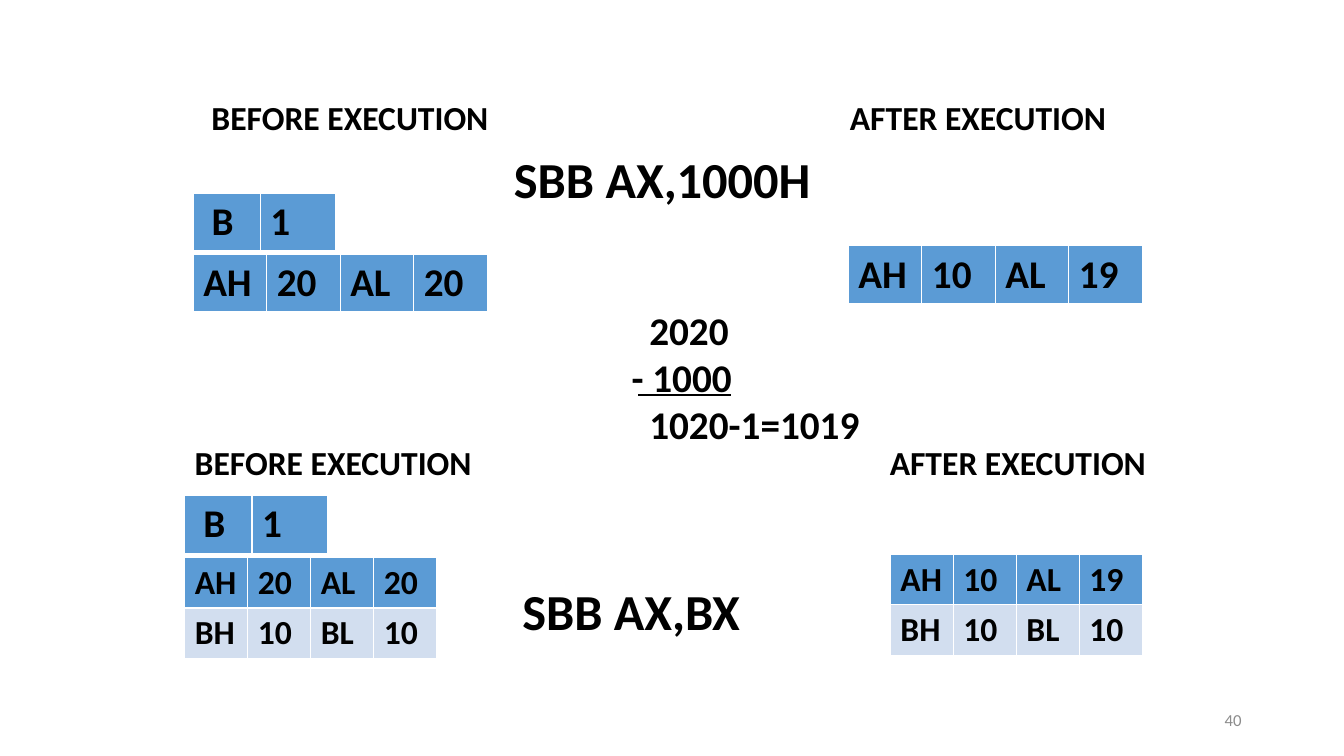
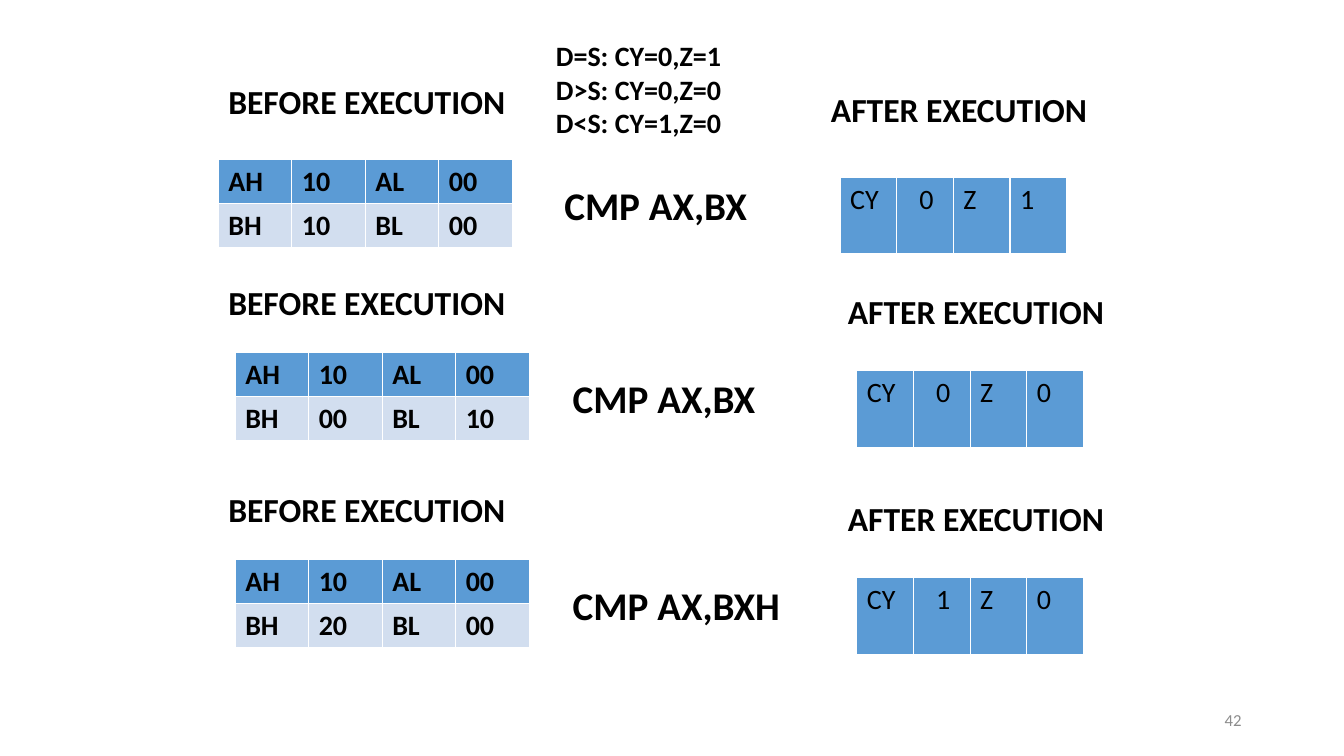
"""Build two slides on the SBB and CMP instructions."""
from dataclasses import dataclass
from typing import NamedTuple

from pptx import Presentation
from pptx.dml.color import RGBColor
from pptx.enum.shapes import MSO_CONNECTOR as Link
from pptx.enum.text import PP_ALIGN as Align
from pptx.oxml.ns import qn
from pptx.slide import Slide
from pptx.text.text import TextFrame
from pptx.util import Pt
from lxml.etree import SubElement

PX = 9525
FONT = "Calibri"
BLACK = RGBColor(0x00, 0x00, 0x00)
GRAY = RGBColor(0x8C, 0x8C, 0x8C)
BLUE = RGBColor(0x5B, 0x9B, 0xD5)
PALE = RGBColor(0xD2, 0xDE, 0xEF)
ROWS = {20: 42, 24: 48, 28: 55}


class Line(NamedTuple):
    text: str
    dent: int = 0


@dataclass
class Label:
    x: int
    y: int
    lines: list[Line]
    size: int = 24
    width: int = 300
    bold: bool = True
    color: RGBColor = BLACK
    align: Align = Align.LEFT


@dataclass
class Grid:
    x: int
    y: int
    cols: list[int]
    rows: list[list[Line]]
    size: int
    bold: bool = True
    high: int = 0


class Case(NamedTuple):
    head: int
    top: int
    shift: int
    code: str
    regs: str
    flags: str


CASES = [
    Case(72, 152, 0, "CMP AX,BX", "AH 10 AL 00/BH 10 BL 00", "0 1"),
    Case(264, 336, 16, "CMP AX,BX", "AH 10 AL 00/BH 00 BL 10", "0 0"),
    Case(461, 533, 16, "CMP AX,BXH", "AH 10 AL 00/BH 20 BL 00", "1 0"),
]


def write(frame: TextFrame, lines: list[Line], size: int, bold: bool,
          color: RGBColor = BLACK, align: Align = Align.LEFT) -> None:
    for i, line in enumerate(lines):
        para = frame.add_paragraph() if i else frame.paragraphs[0]
        para.alignment = align
        if line.dent:
            para._p.get_or_add_pPr().set("marL", str(line.dent * PX))
        run = para.add_run()
        run.text = line.text
        font = run.font
        font.name, font.size, font.bold = FONT, Pt(size), bold
        font.color.rgb = color


def put(slide: Slide, item: Label) -> None:
    high = 10 + len(item.lines) * item.size * 5 // 3
    box = slide.shapes.add_textbox(
        item.x * PX, item.y * PX, item.width * PX, high * PX)
    box.text_frame.word_wrap = True
    write(box.text_frame, item.lines, item.size, item.bold, item.color, item.align)


def draw(slide: Slide, grid: Grid) -> None:
    high = grid.high or ROWS[grid.size]
    count = len(grid.rows)
    table = slide.shapes.add_table(
        count, len(grid.cols), grid.x * PX, grid.y * PX,
        sum(grid.cols) * PX, count * high * PX).table
    for col, width in zip(table.columns, grid.cols):
        col.width = width * PX
    for i, row in enumerate(grid.rows):
        table.rows[i].height = high * PX
        for j, line in enumerate(row):
            cell = table.cell(i, j)
            cell.fill.solid()
            cell.fill.fore_color.rgb = PALE if i else BLUE
            write(cell.text_frame, [line], grid.size, grid.bold)


def regs(slide: Slide, x: int, y: int, width: int, size: int, text: str) -> None:
    rows = [[Line(word) for word in row.split()] for row in text.split("/")]
    draw(slide, Grid(x, y, [width] * 4, rows, size))


def heads(slide: Slide, left: int, right: int, y: int, drop: int = 0) -> None:
    put(slide, Label(left, y, [Line("BEFORE EXECUTION")]))
    put(slide, Label(right, y + drop, [Line("AFTER EXECUTION")]))


def foot(slide: Slide, num: str) -> None:
    put(slide, Label(904, 671, [Line(num)], 12, 288, False, GRAY, Align.RIGHT))


def rule(slide: Slide, x: int, y: int, end: int) -> None:
    line = slide.shapes.add_connector(
        Link.STRAIGHT, x * PX, y * PX, end * PX, y * PX)
    line.line.color.rgb = BLACK
    line.line.width = Pt(1.5)
    SubElement(line._element.spPr, qn("a:effectLst"))


def borrow(slide: Slide) -> None:
    heads(slide, 192, 800, 88)
    heads(slide, 176, 838, 416)
    for x, y in ((184, 184), (176, 472)):
        draw(slide, Grid(x, y, [64, 72], [[Line("B", 8), Line("1")]], 28))
    regs(slide, 184, 242, 70, 28, "AH 20 AL 20")
    regs(slide, 808, 234, 70, 28, "AH 10 AL 19")
    regs(slide, 176, 531, 60, 24, "AH 20 AL 20/BH 10 BL 10")
    regs(slide, 848, 528, 60, 24, "AH 10 AL 19/BH 10 BL 10")
    put(slide, Label(480, 136, [Line("SBB AX,1000H")], 36, 320))
    put(slide, Label(488, 548, [Line("SBB AX,BX")], 36, 280))
    sums = [Line("2020", 25), Line("- 1000", 8), Line("1020-1=1019", 25)]
    put(slide, Label(584, 287, sums, 28, 264))
    rule(slide, 608, 376, 696)
    foot(slide, "40")


def compare(slide: Slide) -> None:
    rules = ["D=S: CY=0,Z=1", "D>S: CY=0,Z=0", "D<S: CY=1,Z=0"]
    put(slide, Label(520, 32, [Line(text) for text in rules], 20, 216))
    for case in CASES:
        move = case.shift
        heads(slide, 208, 782 + move, case.head, 8)
        regs(slide, 208 + move, case.top, 70, 20, case.regs)
        put(slide, Label(528 + move // 2, case.top + 16, [Line(case.code)], 28, 264))
        carry, zero = case.flags.split()
        row = [Line("CY"), Line(carry, 12), Line("Z"), Line(zero)]
        draw(slide, Grid(800 + move, case.top + 17, [54] * 4, [row], 20, False, 73))
    foot(slide, "42")


def main() -> None:
    deck = Presentation()
    deck.slide_width, deck.slide_height = 1280 * PX, 720 * PX
    for build in (borrow, compare):
        build(deck.slides.add_slide(deck.slide_layouts[6]))
    deck.save("out.pptx")


if __name__ == "__main__":
    main()
